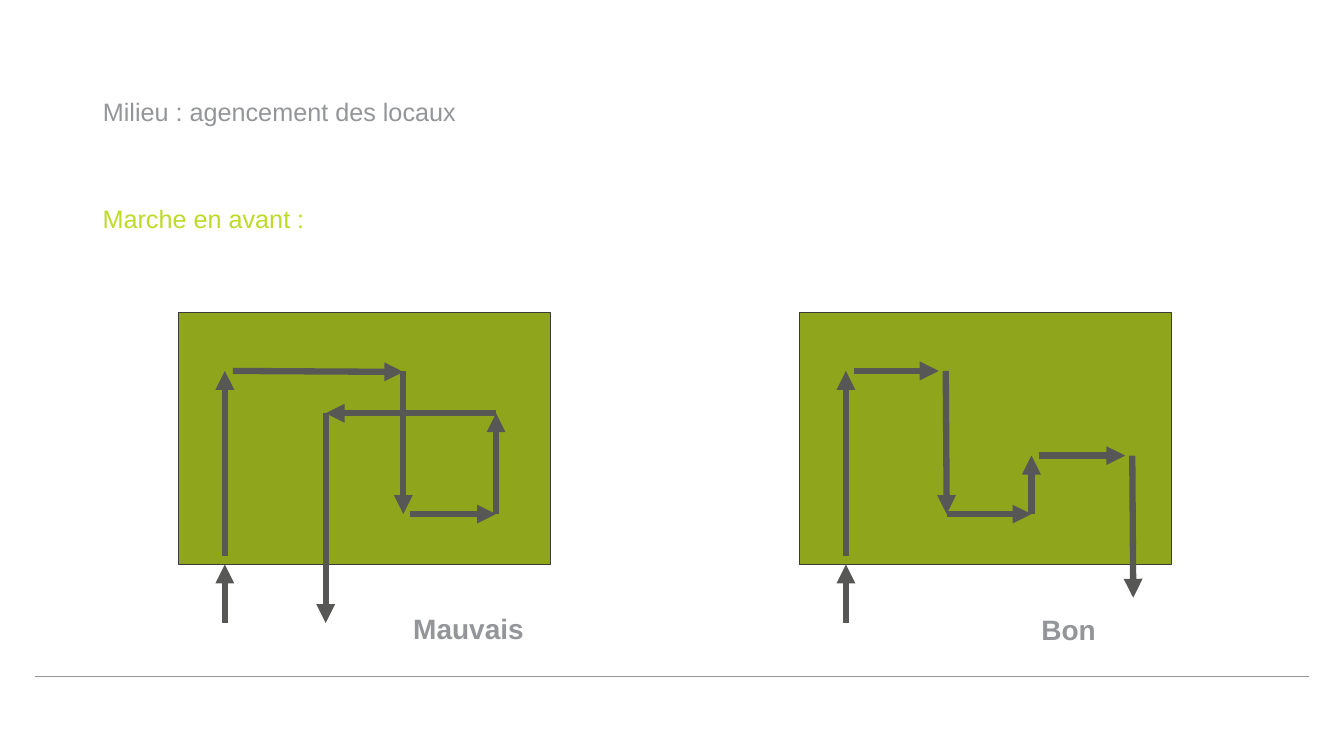
from pptx import Presentation
from pptx.dml.color import RGBColor
from pptx.enum.shapes import MSO_CONNECTOR, MSO_SHAPE
from pptx.enum.text import MSO_ANCHOR, PP_ALIGN
from pptx.util import Inches, Pt
from lxml import etree

STRAIGHT = MSO_CONNECTOR.STRAIGHT
RECTANGLE = MSO_SHAPE.RECTANGLE
MIDDLE, TOP = MSO_ANCHOR.MIDDLE, MSO_ANCHOR.TOP
LEFT = PP_ALIGN.LEFT
GREY = RGBColor(0x93, 0x95, 0x98)
LIME = RGBColor(0xBD, 0xDB, 0x27)
GREEN = RGBColor(0x8F, 0xA6, 0x1C)
OUTLINE = RGBColor(0x3C, 0x3C, 0x3B)
ARROW = RGBColor(0x57, 0x57, 0x56)
A = "{http://schemas.openxmlformats.org/drawingml/2006/main}"


def write(sp, text, size, color, bold=False, anchor=TOP, spacing=1.0):
    tf = sp.text_frame
    tf.word_wrap = True
    tf.vertical_anchor = anchor
    tf.text = text
    p = tf.paragraphs[0]
    p.alignment = LEFT
    p.line_spacing = spacing
    font = p.runs[0].font
    font.name, font.size, font.bold = "Arial", Pt(size), bold
    font.color.rgb = color


def add_line(x1, y1, x2, y2, color, width, arrow=False):
    line = s.shapes.add_connector(STRAIGHT, Inches(x1), Inches(y1), Inches(x2), Inches(y2))
    line.line.color.rgb = color
    line.line.width = Pt(width)
    if arrow:
        etree.SubElement(line.line._get_or_add_ln(), A + "tailEnd", type="triangle")
    etree.SubElement(line._element.spPr, A + "effectLst")


prs = Presentation()
prs.slide_width, prs.slide_height = Inches(13.33), Inches(7.5)
s = prs.slides.add_slide(prs.slide_layouts[5])

# Footer rule
add_line(0.35, 6.71, 12.98, 6.71, GREY, 1)

# Title and subtitle
title = s.shapes.title
title.left, title.top = Inches(0.92), Inches(0.4)
title.width, title.height = Inches(11.5), Inches(1.45)
write(title, "Milieu : agencement des locaux", 18, GREY, anchor=MIDDLE, spacing=0.9)
body = s.shapes.add_textbox(Inches(0.92), Inches(2), Inches(11.5), Inches(0.5))
write(body, "Marche en avant :", 18, LIME, spacing=0.9)

# Room plans: left edge, label with its box, and arrows measured from the left edge
ENTRY = [(0.46, 6.18, 0.46, 5.6), (0.46, 5.52, 0.46, 3.68)]
rooms = [
    (1.77, "Mauvais", 4, 6.02, 1.54, [
        (0.54, 3.68, 2.23, 3.69), (2.23, 3.68, 2.23, 5.1),
        (2.3, 5.1, 3.15, 5.1), (3.15, 5.1, 3.15, 4.1),
        (3.15, 4.1, 1.46, 4.1), (1.46, 4.1, 1.46, 6.18)]),
    (7.93, "Bon", 10.23, 6.03, 1.08, [
        (0.54, 3.68, 1.38, 3.68), (1.45, 3.68, 1.46, 5.1),
        (1.46, 5.1, 2.3, 5.1), (2.3, 5.1, 2.3, 4.52),
        (2.38, 4.52, 3.23, 4.52), (3.3, 4.52, 3.31, 5.93)]),
]
for left, name, label_x, label_y, label_w, route in rooms:
    label = s.shapes.add_textbox(Inches(label_x), Inches(label_y), Inches(label_w), Inches(0.44))
    write(label, name, 20, GREY, bold=True)

    room = s.shapes.add_shape(RECTANGLE, Inches(left), Inches(3.1), Inches(3.69), Inches(2.5))
    room.shadow.inherit = False
    room.fill.solid()
    room.fill.fore_color.rgb = GREEN
    room.line.color.rgb = OUTLINE
    room.line.width = Pt(0.75)

    for x1, y1, x2, y2 in ENTRY + route:
        add_line(left + x1, y1, left + x2, y2, ARROW, 4.5, arrow=True)

prs.save("out.pptx")
